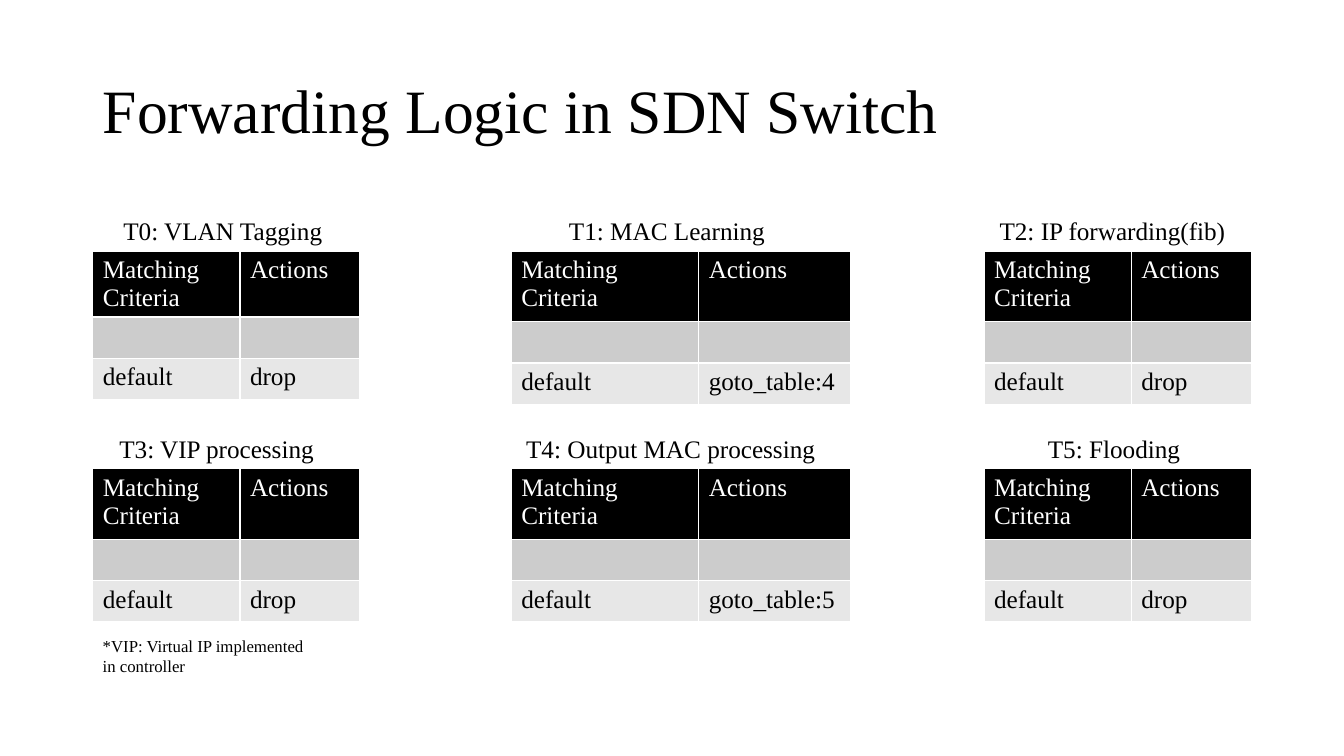
from pptx import Presentation, util as u
from pptx.dml.color import RGBColor
from pptx.enum import text

BLACK = RGBColor(0x00, 0x00, 0x00)
WHITE = RGBColor(0xFF, 0xFF, 0xFF)
MID_GREY = RGBColor(0xCC, 0xCC, 0xCC)
LIGHT_GREY = RGBColor(0xE7, 0xE7, 0xE7)
ROW_FILLS = (BLACK, MID_GREY, LIGHT_GREY)
FONT = "Times New Roman"

# Grid: left edge and column widths of each table column, top of each table row
COLUMNS = ((0.92, (1.46, 1.19)), (5.07, (1.86, 1.51)), (9.76, (1.46, 1.19)))
ROW_TOPS = (2.49, 4.65)
ROW_HEIGHT, TABLE_HEIGHT, CAPTION_HEIGHT = 0.41, 1.51, 0.4

# Caption, its centre and width, and the default action of each flow table
FLOW_TABLES = (
    ("T0: VLAN Tagging", 2.25, 2.25, "drop"),
    ("T1: MAC Learning", 6.67, 2.25, "goto_table:4"),
    ("T2: IP forwarding(fib)", 11.09, 2.55, "drop"),
    ("T3: VIP processing", 2.16, 2.15, "drop"),
    ("T4: Output MAC processing", 6.67, 3.1, "goto_table:5"),
    ("T5: Flooding", 11.06, 1.53, "drop"),
)


def style(paragraph, size, color=BLACK):
    font = paragraph.font
    font.name, font.size, font.bold = FONT, u.Pt(size), False
    font.color.rgb = color


def add_label(slide, lines, left, top, width, height, size):
    frame = slide.shapes.add_textbox(*map(u.Inches, (left, top, width, height))).text_frame
    frame.word_wrap = False
    frame.auto_size = text.MSO_AUTO_SIZE.SHAPE_TO_FIT_TEXT
    frame.text = "\n".join(lines)
    for paragraph in frame.paragraphs:
        style(paragraph, size)


deck = Presentation()
deck.slide_width, deck.slide_height = u.Inches(13.33), u.Inches(7.5)
slide = deck.slides.add_slide(deck.slide_layouts[5])

# Title
title = slide.shapes.title
title.left, title.top, title.width, title.height = map(u.Inches, (0.92, 0.4, 11.5, 1.45))
title.text_frame.text = "Forwarding Logic in SDN Switch"
title.text_frame.vertical_anchor = text.MSO_ANCHOR.MIDDLE
heading = title.text_frame.paragraphs[0]
heading.alignment = text.PP_ALIGN.LEFT
heading.line_spacing = 0.9
style(heading, 44)

# Flow tables with their captions
for index, (caption, centre, caption_width, action) in enumerate(FLOW_TABLES):
    grid_row, grid_column = divmod(index, len(COLUMNS))
    left, widths = COLUMNS[grid_column]
    top = ROW_TOPS[grid_row]
    contents = (("Matching Criteria", "Actions"), ("", ""), ("default", action))

    table_frame = slide.shapes.add_table(
        len(contents), len(widths), *map(u.Inches, (left, top, sum(widths), TABLE_HEIGHT)))
    flow_table = table_frame.table
    for column, width in zip(flow_table.columns, widths):
        column.width = u.Inches(width)
    for row, words, fill in zip(flow_table.rows, contents, ROW_FILLS):
        row.height = u.Inches(ROW_HEIGHT)
        for cell, word in zip(row.cells, words):
            cell.fill.solid()
            cell.fill.fore_color.rgb = fill
            cell.text = word
            style(cell.text_frame.paragraphs[0], 18, WHITE if fill == BLACK else BLACK)
    table_frame.height = u.Inches(TABLE_HEIGHT)

    add_label(slide, [caption], centre - caption_width / 2, top - CAPTION_HEIGHT,
              caption_width, CAPTION_HEIGHT, 18)

# Footnote
add_label(slide, ["*VIP: Virtual IP implemented", "in controller"], 0.92, 6.26, 2.22, 0.5, 12)

deck.save("out.pptx")
